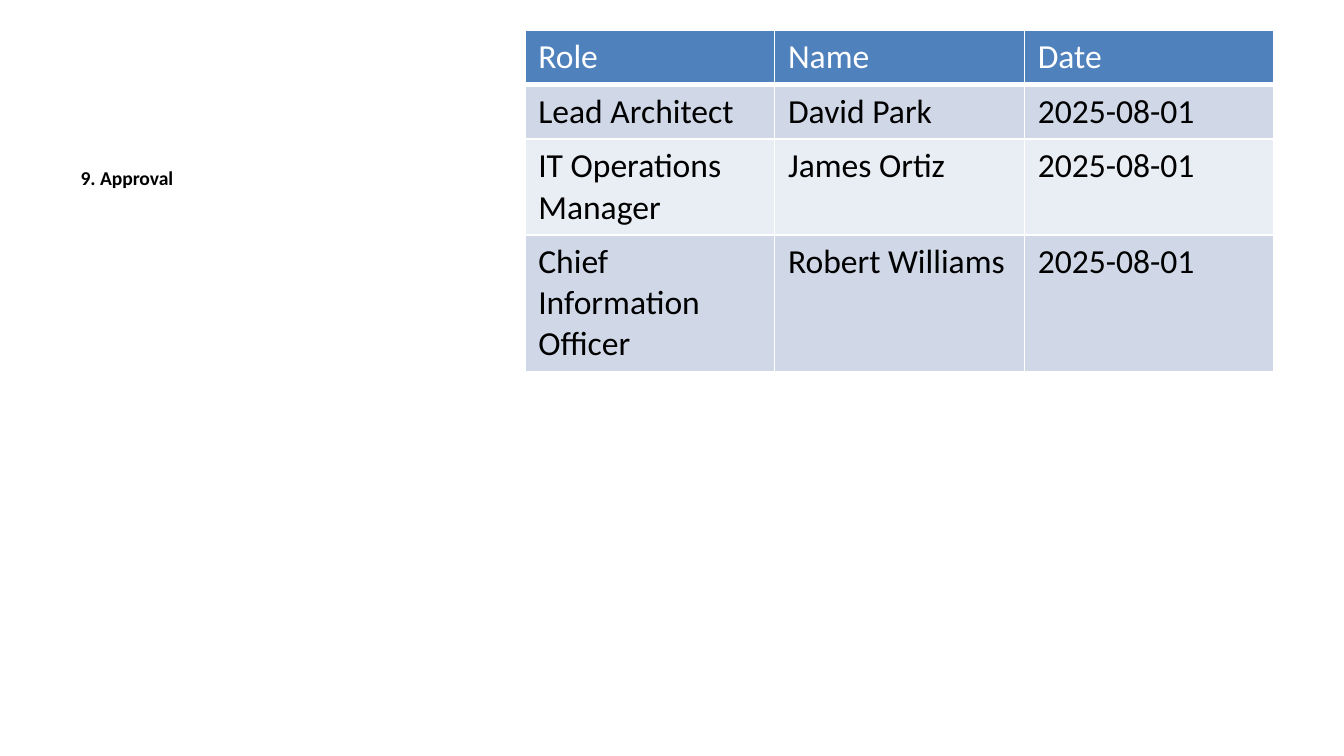
from lxml import etree
from pptx import Presentation
from pptx.dml.color import RGBColor
from pptx.enum.text import MSO_ANCHOR, PP_ALIGN
from pptx.oxml.ns import qn
from pptx.util import Cm, Pt

TOP = MSO_ANCHOR.TOP
LEFT = PP_ALIGN.LEFT

COLORS = {
    "header": "4F81BD",
    "odd_band": "D0D8E8",
    "even_band": "E9EDF4",
    "white": "FFFFFF",
    "black": "000000",
}
HEADING_FONT = {"name": "Calibri", "size": Pt(10.5), "bold": True}
TABLE_FONT = {"name": "Calibri", "size": Pt(18), "bold": False}

ROWS = [
    ["Role", "Name", "Date"],
    ["Lead Architect", "David Park", "2025-08-01"],
    ["IT Operations Manager", "James Ortiz", "2025-08-01"],
    ["Chief Information Officer", "Robert Williams", "2025-08-01"],
]
ROW_HEIGHTS = [1.03, 1.03, 1.81, 2.57]
COLUMN_WIDTH = 4.72


def format_font(font, values, color):
    for name, value in values.items():
        setattr(font, name, value)
    font.color.rgb = RGBColor.from_string(COLORS[color])


def add_border(cell, side, width):
    line = etree.SubElement(cell._tc.get_or_add_tcPr(), qn("a:" + side), w=str(Pt(width)))
    fill = etree.SubElement(line, qn("a:solidFill"))
    etree.SubElement(fill, qn("a:srgbClr"), val=COLORS["white"])


# Slide: caption layout, of which only the text placeholder is needed
presentation = Presentation()
presentation.slide_width = Cm(25.4)
presentation.slide_height = Cm(14.28)
slide = presentation.slides.add_slide(presentation.slide_layouts[7])
for index in (0, 1):
    placeholder = slide.placeholders[index]._element
    placeholder.getparent().remove(placeholder)

# Section heading
heading = slide.placeholders[2]
heading.left, heading.top = Cm(1.27), Cm(3)
heading.width, heading.height = Cm(8.36), Cm(9.78)
heading.text_frame.vertical_anchor = TOP
paragraph = heading.text_frame.paragraphs[0]
paragraph.text = "9. Approval"
paragraph.alignment = LEFT
paragraph.space_before = Pt(0)
format_font(paragraph.runs[0].font, HEADING_FONT, "black")

# Approval table
table = slide.shapes.add_table(
    len(ROWS), len(ROWS[0]), Cm(9.92), Cm(0.57),
    Cm(COLUMN_WIDTH * len(ROWS[0])), Cm(sum(ROW_HEIGHTS)),
).table
for column in table.columns:
    column.width = Cm(COLUMN_WIDTH)

for row_index, texts in enumerate(ROWS):
    table.rows[row_index].height = Cm(ROW_HEIGHTS[row_index])
    is_header = row_index == 0
    band = "header" if is_header else "odd_band" if row_index % 2 else "even_band"
    for column_index, text in enumerate(texts):
        cell = table.cell(row_index, column_index)
        for side in ("lnL", "lnR", "lnT", "lnB"):
            add_border(cell, side, 3 if is_header and side == "lnB" else 1)
        cell.fill.solid()
        cell.fill.fore_color.rgb = RGBColor.from_string(COLORS[band])
        cell.text = text
        font = cell.text_frame.paragraphs[0].runs[0].font
        format_font(font, TABLE_FONT, "white" if is_header else "black")

presentation.save("out.pptx")
